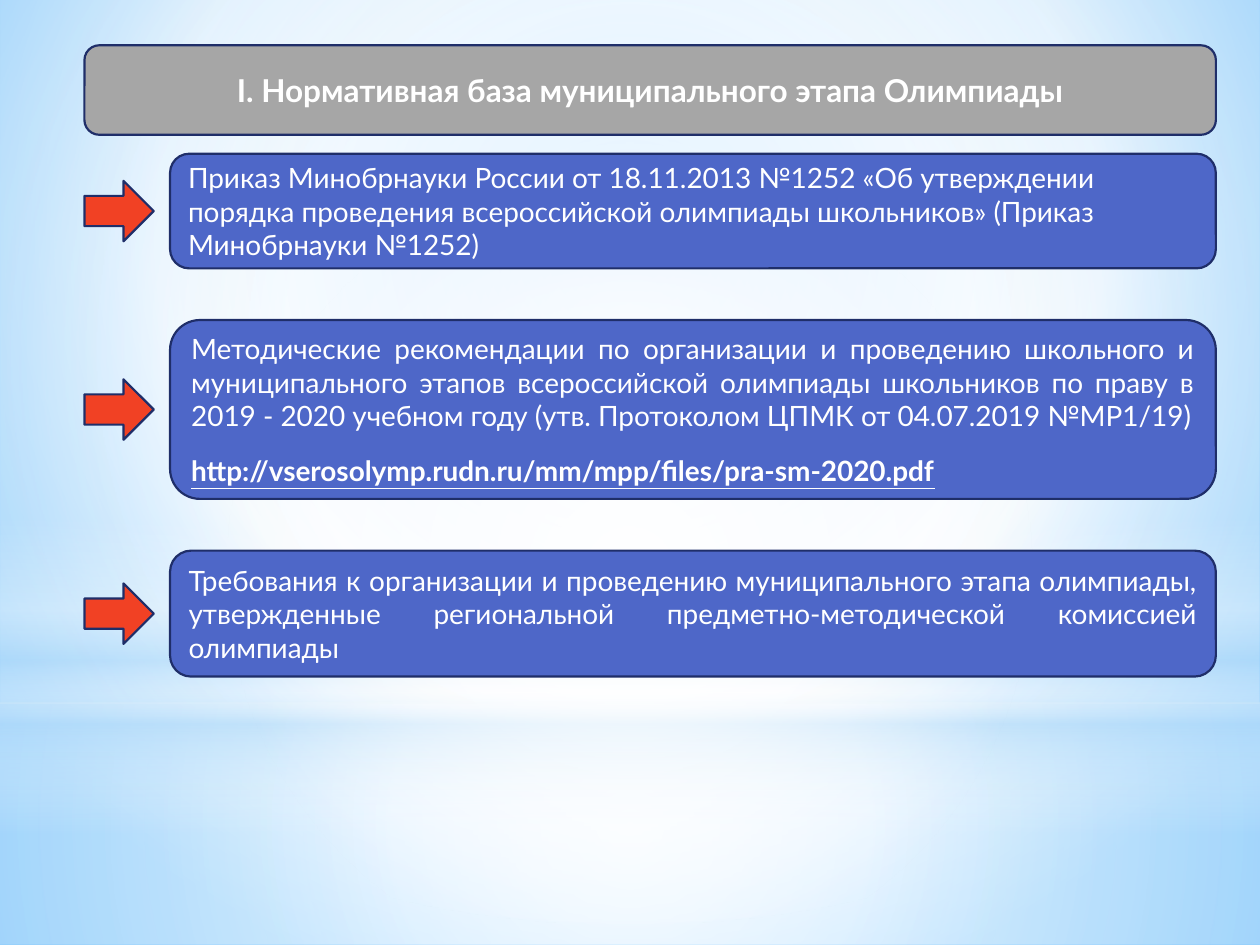
from lxml import etree
from pptx import Presentation
from pptx import util as u
from pptx.dml.color import RGBColor
from pptx.enum import shapes, text
from pptx.oxml import ns

WHITE = RGBColor(0xFF, 0xFF, 0xFF)
PALE = RGBColor(0xB4, 0xDC, 0xFA)
SKY = RGBColor(0x9E, 0xD5, 0xFF)
AZURE = RGBColor(0x5B, 0xB9, 0xFF)
GRAY = RGBColor(0xA6, 0xA6, 0xA6)
BLUE = RGBColor(0x4E, 0x67, 0xC8)
NAVY = RGBColor(0x1F, 0x2E, 0x69)
RED = RGBColor(0xF1, 0x41, 0x24)

SLIDE_WIDTH, SLIDE_HEIGHT = u.Inches(10), u.Inches(7.5)
FONT = "Lato"
KINDS = shapes.MSO_SHAPE
ALIGN = text.PP_ALIGN
CENTER = (50, 50, 50, 50)

LEFT, RIGHT = 6.7, 96.5
BOX_LEFT = 13.5
BOX_TOP, BOX_GAP = 16.27, 5.47
ARROW_WIDTH, ARROW_HEIGHT = 5.5, 6.4

TITLE = "I. Нормативная база муниципального этапа Олимпиады"
ORDER = ("Приказ Минобрнауки России от 18.11.2013 №1252 «Об утверждении порядка "
         "проведения всероссийской олимпиады школьников» (Приказ Минобрнауки №1252)")
GUIDELINES = ("Методические рекомендации по организации и проведению школьного и "
              "муниципального этапов всероссийской олимпиады школьников по праву в "
              "2019 - 2020 учебном году (утв. Протоколом ЦПМК от 04.07.2019 №МР1/19)")
ADDRESS = "http://vserosolymp.rudn.ru/mm/mpp/files/pra-sm-2020.pdf"
REQUIREMENTS = ("Требования к организации и проведению муниципального этапа олимпиады, "
                "утвержденные региональной предметно-методической комиссией олимпиады")


def add_node(parent, tag, **attributes):
    return etree.SubElement(parent, ns.qn(tag), {k: str(v) for k, v in attributes.items()})


def apply_gradient(fill, properties, stops, center=None, angle=90):
    fill.solid()
    gradient = etree.Element(ns.qn("a:gradFill"), rotWithShape="1")
    stop_list = add_node(gradient, "a:gsLst")
    for position, color, opacity in stops:
        stop = add_node(stop_list, "a:gs", pos=position * 1000)
        color_node = add_node(stop, "a:srgbClr", val=color)
        if opacity < 100:
            add_node(color_node, "a:alpha", val=opacity * 1000)
    if center:
        radial = add_node(gradient, "a:path", path="circle")
        add_node(radial, "a:fillToRect", **{side: share * 1000 for side, share in zip("ltrb", center)})
    else:
        add_node(gradient, "a:lin", ang=angle * 60000, scaled=0)
    properties.replace(properties.find(ns.qn("a:solidFill")), gradient)


def add_figure(slide, kind, left, top, width, height):
    shape = slide.shapes.add_shape(
        kind,
        int(SLIDE_WIDTH * left / 100), int(SLIDE_HEIGHT * top / 100),
        int(SLIDE_WIDTH * width / 100), int(SLIDE_HEIGHT * height / 100))
    shape.shadow.inherit = False
    return shape


def add_glow(slide, kind, top, height, stops, center=None):
    shape = add_figure(slide, kind, 0, top, 100, height)
    shape.line.fill.background()
    apply_gradient(shape.fill, shape.element.spPr, stops, center)


def add_outlined(slide, kind, left, top, width, height, color):
    shape = add_figure(slide, kind, left, top, width, height)
    shape.fill.solid()
    shape.fill.fore_color.rgb = color
    shape.line.color.rgb = NAVY
    shape.line.width = u.Pt(1.25)
    return shape


def write_paragraph(paragraph, content, size=16, align=ALIGN.LEFT, spacing=0,
                    bold=False, underline=False):
    paragraph.alignment = align
    paragraph.space_before = paragraph.space_after = u.Pt(spacing)
    run = paragraph.add_run()
    run.text = content
    run.font.name = FONT
    run.font.size = u.Pt(size)
    run.font.bold = bold
    run.font.underline = underline
    run.font.color.rgb = WHITE


def add_box(slide, left, top, height, color, paragraphs):
    box = add_outlined(slide, KINDS.ROUNDED_RECTANGLE, left, top, RIGHT - left, height, color)
    frame = box.text_frame
    frame.word_wrap = True
    frame.vertical_anchor = text.MSO_ANCHOR.MIDDLE
    for index, (content, style) in enumerate(paragraphs):
        paragraph = frame.add_paragraph() if index else frame.paragraphs[0]
        write_paragraph(paragraph, content, **style)


def add_backdrop(slide):
    background = slide.background.fill
    background.solid()
    properties = next(slide.element.iter(ns.qn("p:bgPr")))
    apply_gradient(background, properties,
                   [(0, SKY, 100), (60, WHITE, 100), (100, AZURE, 100)], (20, 10, 20, 60))
    add_glow(slide, KINDS.RECTANGLE, 74.4, 25.6,
             [(0, WHITE, 91), (37, WHITE, 76), (100, PALE, 79)], CENTER)
    add_glow(slide, KINDS.RECTANGLE, 0, 74.4,
             [(0, WHITE, 89), (48, WHITE, 62), (100, PALE, 79)], CENTER)
    add_glow(slide, KINDS.RECTANGLE, 54.93, 33.33,
             [(0, WHITE, 0), (29, WHITE, 30), (45, PALE, 40),
              (55, WHITE, 26), (65, PALE, 60), (100, WHITE, 0)])
    add_glow(slide, KINDS.OVAL, 23.33, 74.4, [(0, WHITE, 100), (56, WHITE, 0)], CENTER)


def add_documents(slide):
    justified = dict(align=ALIGN.JUSTIFY, spacing=6)
    documents = [
        (12.13, [(ORDER, {})]),
        (18.93, [(GUIDELINES, justified),
                 (ADDRESS, dict(justified, bold=True, underline=True))]),
        (13.33, [(REQUIREMENTS, justified)]),
    ]
    top = BOX_TOP
    for height, paragraphs in documents:
        add_box(slide, BOX_LEFT, top, height, BLUE, paragraphs)
        arrow_top = top + (height - ARROW_HEIGHT) / 2
        add_outlined(slide, KINDS.RIGHT_ARROW, LEFT, arrow_top, ARROW_WIDTH, ARROW_HEIGHT, RED)
        top += height + BOX_GAP


def main():
    presentation = Presentation()
    presentation.slide_width, presentation.slide_height = SLIDE_WIDTH, SLIDE_HEIGHT
    slide = presentation.slides.add_slide(presentation.slide_layouts[6])
    add_backdrop(slide)
    add_box(slide, LEFT, 4.8, 9.47, GRAY,
            [(TITLE, dict(size=18, align=ALIGN.CENTER, bold=True))])
    add_documents(slide)
    presentation.save("out.pptx")


if __name__ == "__main__":
    main()
